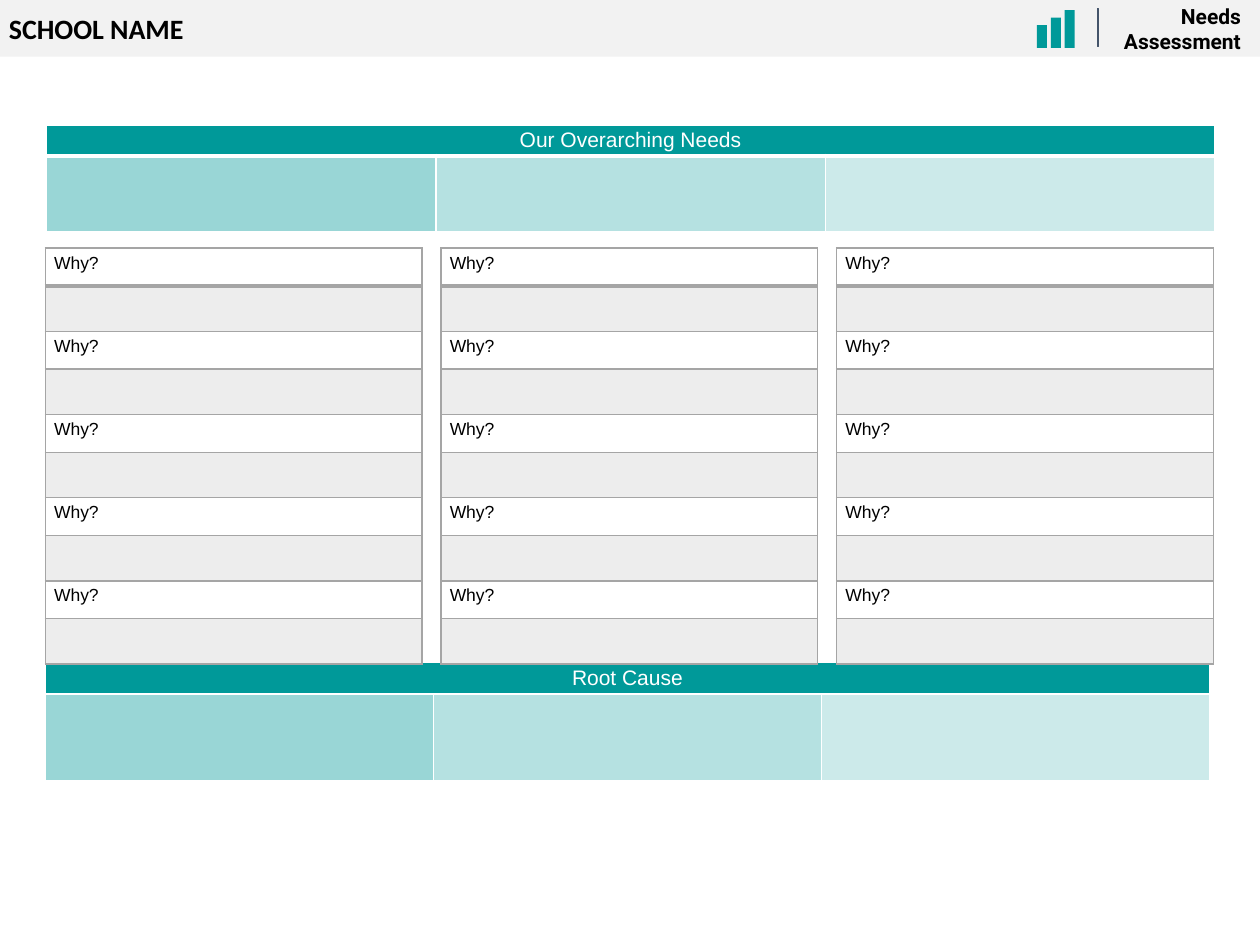
from dataclasses import dataclass
from typing import Optional

from lxml import etree
from pptx import Presentation
from pptx.dml.color import RGBColor
from pptx.enum.shapes import MSO_SHAPE
from pptx.enum.text import MSO_ANCHOR, MSO_AUTO_SIZE, PP_ALIGN
from pptx.oxml.ns import qn
from pptx.util import Inches, Pt

RECTANGLE = MSO_SHAPE.RECTANGLE
MIDDLE = MSO_ANCHOR.MIDDLE
NO_AUTOFIT = MSO_AUTO_SIZE.NONE
LEFT, CENTER, RIGHT = PP_ALIGN.LEFT, PP_ALIGN.CENTER, PP_ALIGN.RIGHT
TITLE_ONLY = 5
SLIDE_WIDTH, SLIDE_HEIGHT = 10, 7.5
BANNER_HEIGHT = 0.06 * SLIDE_HEIGHT
MARGIN = 0.36
WHY_COLUMNS, WHY_ROUNDS = 3, 5
WHY_TOP, WHY_PITCH, WHY_WIDTH = 1.97, 3.14, 2.99
QUESTION_HEIGHT, ANSWER_HEIGHT = 0.3, 0.36


@dataclass(frozen=True)
class Theme:
    teal: str = "009999"
    banner: str = "F2F2F2"
    divider: str = "44546A"
    grey: str = "A5A5A5"
    white: str = "FFFFFF"
    black: str = "000000"
    tints: tuple = (40, 29, 20)
    answer_tint: int = 20
    title_font: str = "Calibri"
    label_font: str = "Roboto"
    table_font: str = "Arial"
    title_size: int = 16
    heading_size: int = 12
    question_size: int = 10


THEME = Theme()


@dataclass(frozen=True)
class NeedsBand:
    """A heading over three cells of fading teal."""
    heading: str
    left: float
    top: float
    column_width: float
    body_height: float
    heading_rule: int


BANDS = (
    NeedsBand("Our Overarching Needs", MARGIN + 0.01, 0.99, 3.09, 0.6, 3),
    NeedsBand("Root Cause", MARGIN, 5.26, 3.08, 0.69, 1),
)


def format_paragraph(frame, text: str, font: str, size: int, color: str,
                     bold: bool, align=LEFT) -> None:
    frame.text = text
    paragraph = frame.paragraphs[0]
    paragraph.alignment = align
    paragraph.font.name = font
    paragraph.font.size = Pt(size)
    paragraph.font.bold = bold
    paragraph.font.color.rgb = RGBColor.from_string(color)


def format_banner_text(box, text: str, font: str, size: int, align) -> None:
    frame = box.text_frame
    format_paragraph(frame, text, font, size, THEME.black, True, align)
    frame.word_wrap = True
    frame.auto_size = NO_AUTOFIT
    frame.vertical_anchor = MIDDLE
    frame.margin_left = frame.margin_right = Inches(0.07)
    frame.margin_top = frame.margin_bottom = Inches(0.07)


def add_block(slide, left: float, top: float, width: float, height: float,
              color: str, outline: float = 0) -> None:
    block = slide.shapes.add_shape(
        RECTANGLE, *map(Inches, (left, top, width, height)))
    block.shadow.inherit = False
    block.fill.solid()
    block.fill.fore_color.rgb = RGBColor.from_string(color)
    if outline:
        block.line.color.rgb = RGBColor.from_string(color)
        block.line.width = Pt(outline)
    else:
        block.line.fill.background()


def fill_cell(cell, color: Optional[str], opacity: int = 100) -> None:
    if color is None:
        cell.fill.background()
        return
    cell.fill.solid()
    cell.fill.fore_color.rgb = RGBColor.from_string(color)
    if opacity < 100:
        rgb = next(cell._tc.tcPr.iter(qn("a:srgbClr")))
        etree.SubElement(rgb, qn("a:alpha"), val=str(opacity * 1000))


def border_cell(cell, color: str, bottom: int = 1) -> None:
    properties = cell._tc.get_or_add_tcPr()
    widths = {"a:lnL": 1, "a:lnR": 1, "a:lnT": 1, "a:lnB": bottom}
    for position, (side, width) in enumerate(widths.items()):
        line = etree.Element(qn(side), w=str(Pt(width)))
        fill = etree.SubElement(line, qn("a:solidFill"))
        etree.SubElement(fill, qn("a:srgbClr"), val=color)
        properties.insert(position, line)


def set_cell_margins(cell, side: float, end: float) -> None:
    cell.margin_left = cell.margin_right = Inches(side)
    cell.margin_top = cell.margin_bottom = Inches(end)


def add_grid(slide, left: float, top: float, columns: list, rows: list):
    table = slide.shapes.add_table(
        len(rows), len(columns),
        *map(Inches, (left, top, sum(columns), sum(rows)))).table
    table.horz_banding = False
    for column, width in zip(table.columns, columns):
        column.width = Inches(width)
    for row, height in zip(table.rows, rows):
        row.height = Inches(height)
    return table


def add_needs_band(slide, band: NeedsBand) -> None:
    table = add_grid(slide, band.left, band.top,
                     [band.column_width] * len(THEME.tints),
                     [0.23, band.body_height])
    for column, tint in enumerate(THEME.tints):
        heading, body = table.cell(0, column), table.cell(1, column)
        fill_cell(heading, THEME.teal)
        border_cell(heading, THEME.white, band.heading_rule)
        fill_cell(body, THEME.teal, tint)
        border_cell(body, THEME.white)
    heading = table.cell(0, 0)
    heading.merge(table.cell(0, len(THEME.tints) - 1))
    set_cell_margins(heading, 0.06, 0.03)
    format_paragraph(heading.text_frame, band.heading, THEME.table_font,
                     THEME.heading_size, THEME.white, False, CENTER)


def add_why_column(slide, left: float) -> None:
    """Stack the question rows, each with an empty answer row below it."""
    table = add_grid(slide, left, WHY_TOP, [WHY_WIDTH],
                     [QUESTION_HEIGHT, ANSWER_HEIGHT] * WHY_ROUNDS)
    for row in range(2 * WHY_ROUNDS):
        cell = table.cell(row, 0)
        is_question = row % 2 == 0
        set_cell_margins(cell, 0.07, 0.04)
        format_paragraph(cell.text_frame, "Why?" if is_question else "",
                         THEME.table_font, THEME.question_size,
                         THEME.black, False)
        fill_cell(cell, None if is_question else THEME.grey,
                  THEME.answer_tint)
        border_cell(cell, THEME.grey, 2 if row == 0 else 1)


def add_banner(slide) -> None:
    add_block(slide, 0, 0, SLIDE_WIDTH, BANNER_HEIGHT, THEME.banner)
    bar_base = 0.38
    for bar, height in enumerate((0.18, 0.24, 0.3)):
        add_block(slide, 8.23 + 0.11 * bar, bar_base - height, 0.08, height,
                  THEME.teal)
    add_block(slide, 8.71, 0.07, 0.01, 0.3, THEME.divider, 0.75)

    label = slide.shapes.add_textbox(
        *map(Inches, (8.38, 0, 1.54, BANNER_HEIGHT)))
    format_banner_text(label, "Needs Assessment", THEME.label_font,
                       THEME.heading_size, RIGHT)

    title = slide.shapes.title
    title.left, title.top, title.width, title.height = map(
        Inches, (0, 0, 3.73, BANNER_HEIGHT))
    format_banner_text(title, "SCHOOL NAME", THEME.title_font,
                       THEME.title_size, LEFT)
    slide.shapes._spTree.append(title._element)  # in front of the banner


def main() -> None:
    deck = Presentation()
    deck.slide_width, deck.slide_height = map(
        Inches, (SLIDE_WIDTH, SLIDE_HEIGHT))
    slide = deck.slides.add_slide(deck.slide_layouts[TITLE_ONLY])
    add_banner(slide)
    for band in BANDS:
        add_needs_band(slide, band)
    for column in range(WHY_COLUMNS):
        add_why_column(slide, MARGIN + WHY_PITCH * column)
    deck.save("out.pptx")


if __name__ == "__main__":
    main()
